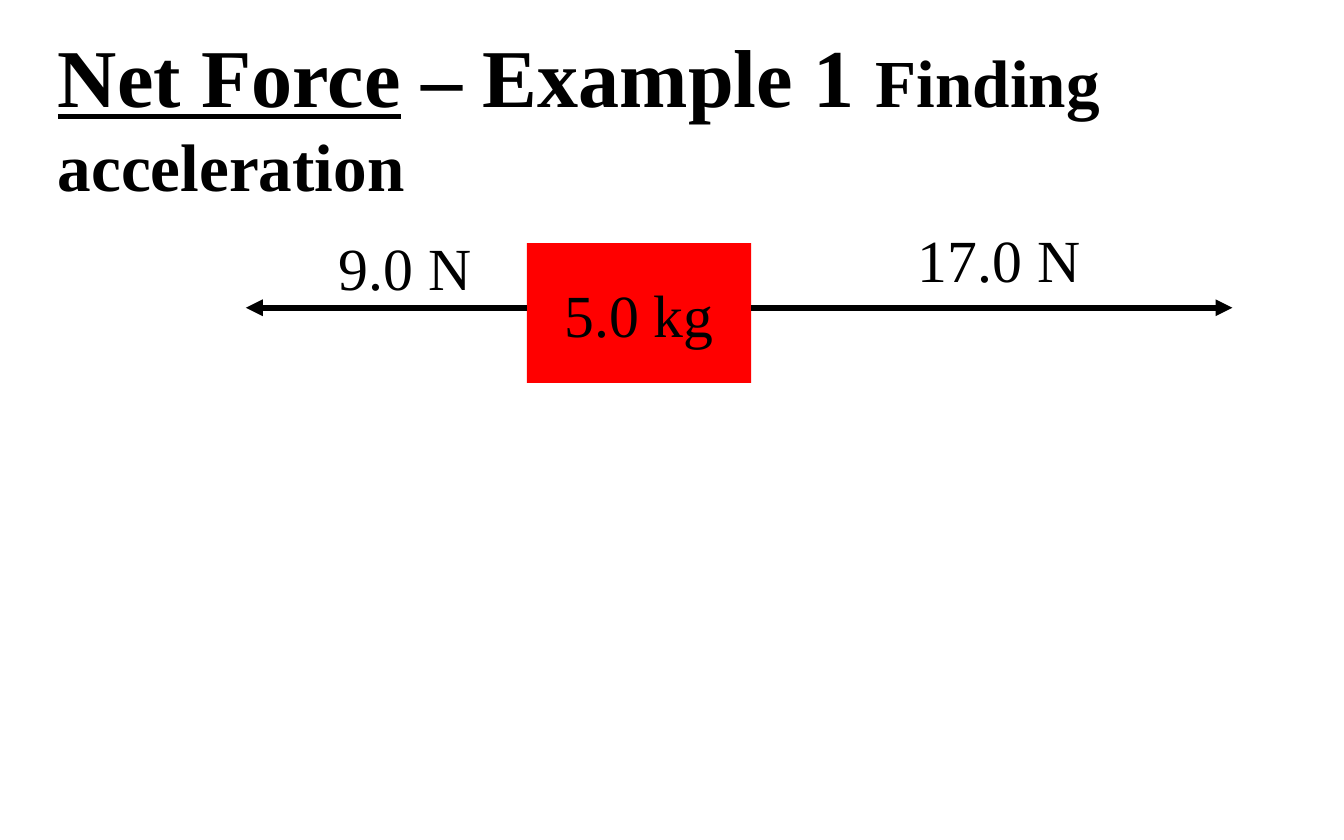
from lxml import etree
from pptx import Presentation
from pptx.dml.color import RGBColor
from pptx.enum.shapes import MSO_CONNECTOR, MSO_SHAPE
from pptx.enum.text import MSO_ANCHOR, MSO_AUTO_SIZE, PP_ALIGN
from pptx.oxml.ns import qn
from pptx.util import Inches, Pt

STRAIGHT = MSO_CONNECTOR.STRAIGHT
RECTANGLE = MSO_SHAPE.RECTANGLE
TOP, MIDDLE = MSO_ANCHOR.TOP, MSO_ANCHOR.MIDDLE
LEFT, CENTER = PP_ALIGN.LEFT, PP_ALIGN.CENTER
NO_FIT, GROW = MSO_AUTO_SIZE.NONE, MSO_AUTO_SIZE.SHAPE_TO_FIT_TEXT

COLORS = {"ink": "000000", "block": "FF0000"}
FONT = "Times New Roman"
LABEL_SIZE = 32


class ForceSlide:
    def __init__(self, slide):
        self.s = slide

    def color(self, name):
        return RGBColor.from_string(COLORS[name])

    def run(self, p, text, size=LABEL_SIZE, bold=False, underline=False):
        r = p.add_run()
        r.text = text
        r.font.name = FONT
        r.font.size = Pt(size)
        r.font.bold = bold
        r.font.underline = underline
        r.font.color.rgb = self.color("ink")

    def title(self, x, y, w, h, runs):
        sp = self.s.shapes.title
        sp.left, sp.top, sp.width, sp.height = map(Inches, (x, y, w, h))
        tf = sp.text_frame
        tf.word_wrap = True
        tf.auto_size = NO_FIT
        tf.vertical_anchor = TOP
        p = tf.paragraphs[0]
        p.alignment = LEFT
        for text, size, underline in runs:
            self.run(p, text, size, True, underline)

    def block(self, x, y, w, h, text):
        sp = self.s.shapes.add_shape(RECTANGLE, *map(Inches, (x, y, w, h)))
        sp.shadow.inherit = False
        sp.fill.solid()
        sp.fill.fore_color.rgb = self.color("block")
        sp.line.fill.background()
        tf = sp.text_frame
        tf.word_wrap = False
        tf.vertical_anchor = MIDDLE
        p = tf.paragraphs[0]
        p.alignment = CENTER
        self.run(p, text)

    def arrow(self, x1, x2, y):
        line = self.s.shapes.add_connector(STRAIGHT, *map(Inches, (x1, y, x2, y)))
        line.line.color.rgb = self.color("ink")
        line.line.width = Pt(3)
        etree.SubElement(line.line._get_or_add_ln(), qn("a:tailEnd"), type="triangle")
        etree.SubElement(line._element.spPr, qn("a:effectLst"))

    def label(self, x, y, w, h, text):
        sp = self.s.shapes.add_textbox(*map(Inches, (x, y, w, h)))
        tf = sp.text_frame
        tf.word_wrap = False
        tf.auto_size = GROW
        self.run(tf.paragraphs[0], text)


def main():
    prs = Presentation()
    prs.slide_width, prs.slide_height = Inches(10), Inches(6.25)
    s = ForceSlide(prs.slides.add_slide(prs.slide_layouts[5]))

    s.title(0.33, 0.14, 9.08, 1.45, [
        ("Net Force", 44, True),
        (" – Example 1 ", 44, False),
        ("Finding acceleration", 36, False),
    ])

    block_x, block_w, force_y = 3.92, 1.67, 2.29
    s.block(block_x, 1.81, block_w, 1.04, "5.0 kg")
    s.arrow(block_x + block_w, 9.17, force_y)
    s.arrow(block_x, 1.83, force_y)
    s.label(6.73, 1.61, 1.42, 0.64, "17.0 N")
    s.label(2.42, 1.67, 1.2, 0.64, "9.0 N")

    prs.save("out.pptx")


if __name__ == "__main__":
    main()
